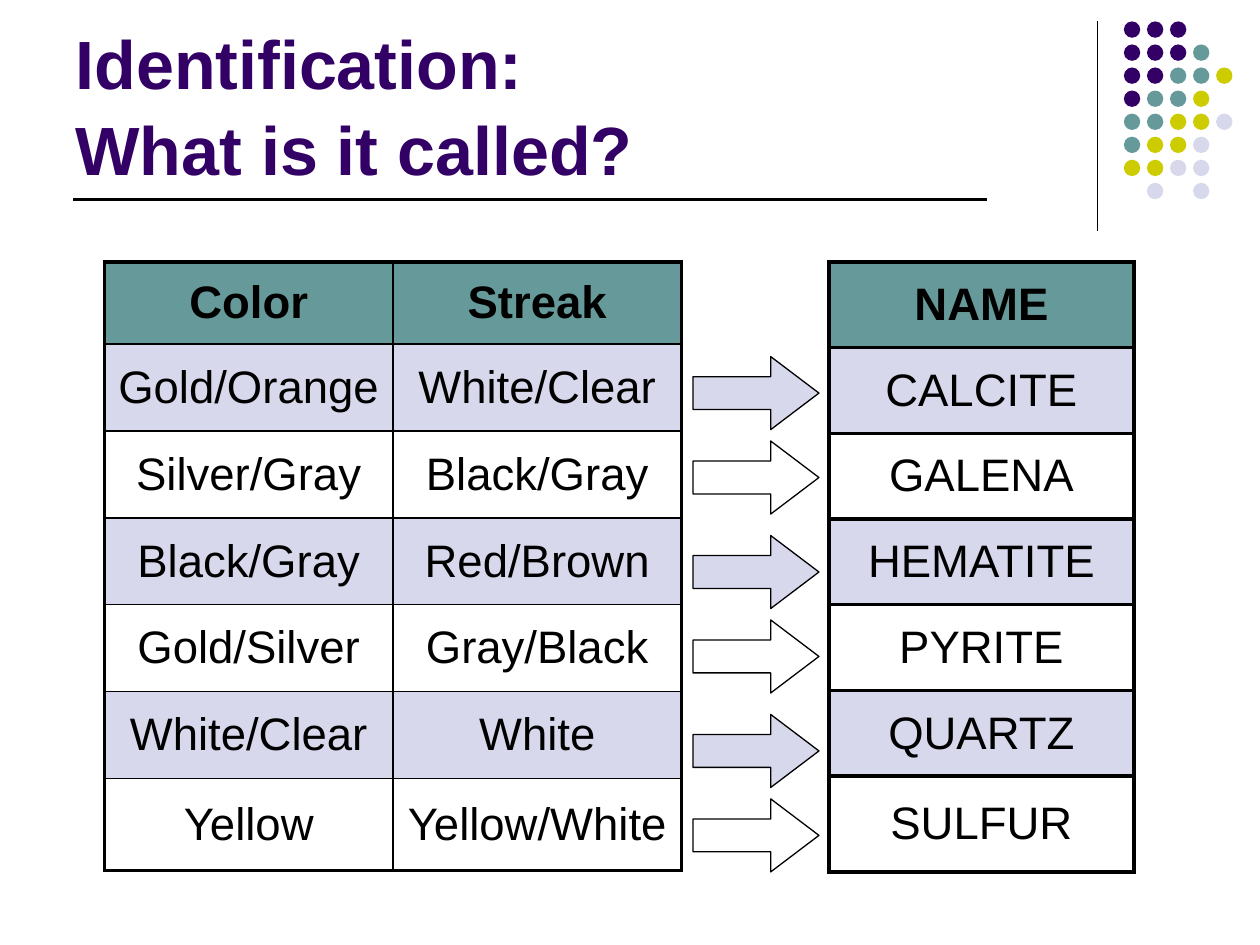
from lxml import etree
from pptx import Presentation
from pptx.dml.color import RGBColor
from pptx.enum.shapes import MSO_CONNECTOR, MSO_SHAPE
from pptx.enum.text import MSO_ANCHOR, MSO_AUTO_SIZE, PP_ALIGN
from pptx.oxml.ns import qn
from pptx.util import Inches, Pt

LINE = MSO_CONNECTOR.STRAIGHT
OVAL = MSO_SHAPE.OVAL
ARROW = MSO_SHAPE.RIGHT_ARROW
MIDDLE, BOTTOM = MSO_ANCHOR.MIDDLE, MSO_ANCHOR.BOTTOM
CENTER, LEFT = PP_ALIGN.CENTER, PP_ALIGN.LEFT
NO_FIT = MSO_AUTO_SIZE.NONE

COLORS = {
    "ink": "000000",
    "purple": "330066",
    "teal": "669999",
    "lime": "CCCC00",
    "pale": "D8D8EC",
}
THICK, THIN = 2.25, 1


class Deck:
    font = "Arial"

    def __init__(self):
        self.prs = Presentation()
        self.prs.slide_width = Inches(10)
        self.prs.slide_height = Inches(7.5)
        self.slide = self.prs.slides.add_slide(self.prs.slide_layouts[5])

    def color(self, name):
        return RGBColor.from_string(COLORS[name])

    def paint(self, item, name):
        if name:
            item.fill.solid()
            item.fill.fore_color.rgb = self.color(name)
        else:
            item.fill.background()

    def style(self, par, size, name, bold, align):
        par.alignment = align
        for run in par.runs:
            run.font.name = self.font
            run.font.size = Pt(size)
            run.font.bold = bold
            run.font.color.rgb = self.color(name)

    def title(self, text, left, top, width, height):
        box = self.slide.shapes.title
        box.left, box.top = Inches(left), Inches(top)
        box.width, box.height = Inches(width), Inches(height)
        frame = box.text_frame
        frame.text = text
        frame.auto_size = NO_FIT
        frame.vertical_anchor = BOTTOM
        par = frame.paragraphs[0]
        par.line_spacing = 1.05
        self.style(par, 39, "purple", True, LEFT)

    def line(self, x1, y1, x2, y2, weight):
        line = self.slide.shapes.add_connector(
            LINE, Inches(x1), Inches(y1), Inches(x2), Inches(y2))
        line.line.color.rgb = self.color("ink")
        line.line.width = Pt(weight)
        etree.SubElement(line._element.spPr, qn("a:effectLst"))

    def shape(self, kind, left, top, width, height, fill, weight=0):
        shape = self.slide.shapes.add_shape(
            kind, Inches(left), Inches(top), Inches(width), Inches(height))
        shape.shadow.inherit = False
        self.paint(shape, fill)
        if weight:
            shape.line.color.rgb = self.color("ink")
            shape.line.width = Pt(weight)
        else:
            shape.line.fill.background()
        return shape

    def border(self, cell, weights):
        props = cell._tc.get_or_add_tcPr()
        for spot, (side, weight) in enumerate(weights.items()):
            edge = etree.Element(qn(f"a:ln{side}"), w=str(Pt(weight)))
            fill = etree.SubElement(edge, qn("a:solidFill"))
            etree.SubElement(fill, qn("a:srgbClr"), val=COLORS["ink"])
            props.insert(spot, edge)

    def table(self, rows, left, top, widths, heights, inner):
        table = self.slide.shapes.add_table(
            len(rows), len(widths), Inches(left), Inches(top),
            Inches(sum(widths)), Inches(sum(heights))).table
        table.first_row = table.horz_banding = False
        for col, width in zip(table.columns, widths):
            col.width = Inches(width)
        for row, height in zip(table.rows, heights):
            row.height = Inches(height)
        end, last = len(rows) - 1, len(widths) - 1
        for r, texts in enumerate(rows):
            for c, text in enumerate(texts):
                cell = table.cell(r, c)
                cell.text = text
                cell.vertical_anchor = MIDDLE
                self.style(cell.text_frame.paragraphs[0], 26, "ink",
                           r == 0, CENTER)
                self.paint(cell, "teal" if r == 0 else band(r - 1))
                self.border(cell, {
                    "L": THICK if c == 0 else inner,
                    "R": THICK if c == last else inner,
                    "T": THICK if r == 0 else inner,
                    "B": THICK if r == end else inner,
                })


def band(index):
    return "pale" if index % 2 == 0 else None


def main():
    deck = Deck()

    # Corner rule and dot grid, one letter per dot color
    deck.line(8.71, 0.17, 8.71, 1.83, 0.75)
    keys = {"p": "purple", "t": "teal", "l": "lime", "w": "pale"}
    dots = ["ppp", "pppt", "ppttl", "pttl", "ttllw", "tllw", "llww", " w w"]
    for r, row in enumerate(dots):
        for c, key in enumerate(row):
            if key in keys:
                deck.shape(OVAL, 8.92 + c * 0.183, 0.17 + r * 0.183,
                           0.13, 0.13, keys[key])

    # Title and underline
    deck.title("Identification:\vWhat is it called?", 0.5, 0.13, 8.25, 1.42)
    deck.line(0.58, 1.58, 7.83, 1.58, 1.75)

    # Mineral traits and names
    traits = [
        ("Color", "Streak"),
        ("Gold/Orange", "White/Clear"),
        ("Silver/Gray", "Black/Gray"),
        ("Black/Gray", "Red/Brown"),
        ("Gold/Silver", "Gray/Black"),
        ("White/Clear", "White"),
        ("Yellow", "Yellow/White"),
    ]
    names = ["NAME", "CALCITE", "GALENA", "HEMATITE", "PYRITE", "QUARTZ",
             "SULFUR"]
    deck.table(traits, 0.83, 2.08, [2.29] * 2,
               [0.65] + [0.69] * 5 + [0.73], THIN)
    deck.table([(name,) for name in names], 6.58, 2.08, [2.42],
               [0.68] * 6 + [0.76], THICK)

    # Arrows in pairs, from traits to names
    for i in range(6):
        top = 2.83 + i // 2 * 1.42 + i % 2 * 0.67
        arrow = deck.shape(ARROW, 5.5, top, 1, 0.58, band(i), 0.75)
        arrow.adjustments[0] = 0.45
        arrow.adjustments[1] = 0.66

    deck.prs.save("out.pptx")


if __name__ == "__main__":
    main()
